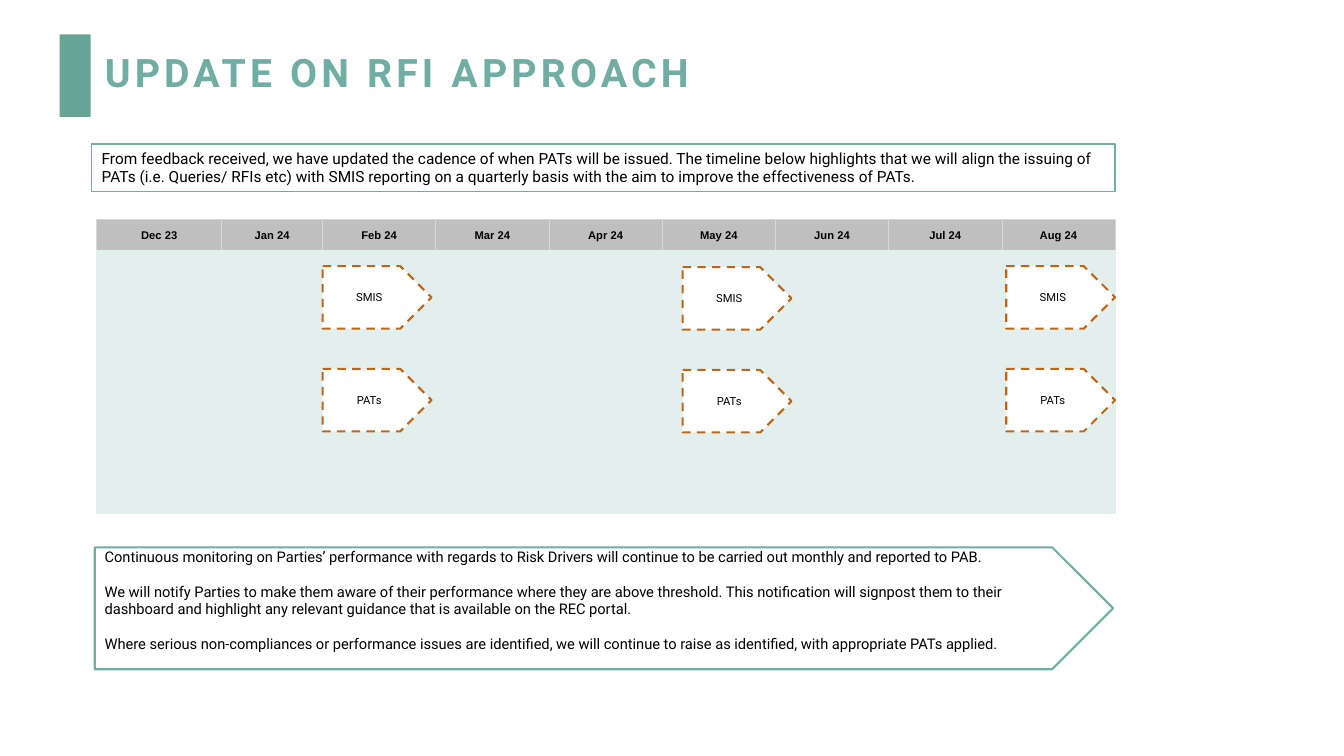
from dataclasses import dataclass

from lxml import etree
from pptx import Presentation
from pptx.dml.color import RGBColor
from pptx.enum.dml import MSO_LINE
from pptx.enum.shapes import MSO_SHAPE
from pptx.enum.text import MSO_ANCHOR, PP_ALIGN
from pptx.oxml.ns import qn
from pptx.shapes.autoshape import Shape
from pptx.slide import Slide
from pptx.table import _Cell
from pptx.text.text import TextFrame
from pptx.util import Inches, Pt

RECTANGLE, PENTAGON = MSO_SHAPE.RECTANGLE, MSO_SHAPE.PENTAGON
TOP, MIDDLE = MSO_ANCHOR.TOP, MSO_ANCHOR.MIDDLE
LEFT, CENTER = PP_ALIGN.LEFT, PP_ALIGN.CENTER
DASH = MSO_LINE.DASH

TEAL, DARK_TEAL, PALE_TEAL = "70ADA3", "68A495", "E2EFED"
WHITE, BLACK, ORANGE = "FFFFFF", "000000", "BE6516"
GREY, LIGHT_GREY = "BFBFBF", "D9D9D9"

TITLE = "UPDATE ON RFI APPROACH"
INTRODUCTION = (
    "From feedback received, we have updated the cadence of when PATs will be issued. "
    "The timeline below highlights that we will align the issuing of PATs "
    "(i.e. Queries/ RFIs etc) with SMIS reporting on a quarterly basis "
    "with the aim to improve the effectiveness of PATs."
)
MONITORING = [
    "Continuous monitoring on Parties’ performance with regards to Risk Drivers "
    "will continue to be carried out monthly and reported to PAB.",
    "We will notify Parties to make them aware of their performance where they are "
    "above threshold. This notification will signpost them to their dashboard and "
    "highlight any relevant guidance that is available on the REC portal.",
    "Where serious non-compliances or performance issues are identified, we will "
    "continue to raise as identified, with appropriate PATs applied.",
]
MONTHS = ["Dec 23", "Jan 24", "Feb 24", "Mar 24", "Apr 24",
          "May 24", "Jun 24", "Jul 24", "Aug 24"]
TABLE_WIDTH = 10.1
FIRST_WIDTHS = [1.24, 1.0]
ROW_HEIGHTS = [0.31, 0.77, 1.83]


@dataclass
class Box:
    left: float
    top: float
    width: float
    height: float


@dataclass
class Milestone:
    left: float
    top: float


MILESTONES = [Milestone(3.2, 2.64), Milestone(6.77, 2.65), Milestone(9.98, 2.64)]
MILESTONE_LABELS = ["SMIS", "PATs"]
LABEL_PITCH = 1.02


def color(value: str) -> RGBColor:
    return RGBColor.from_string(value)


def write(text_frame: TextFrame, lines: list[str], size: float, align: PP_ALIGN,
          font: str = "Roboto", font_color: str = BLACK, bold: bool = False,
          gap: float = 0) -> None:
    text_frame.text = "\n".join(lines)
    text_frame.word_wrap = True
    for index, paragraph in enumerate(text_frame.paragraphs):
        paragraph.alignment = align
        if index:
            paragraph.space_before = Pt(gap)
        for run in paragraph.runs:
            run.font.name = font
            run.font.size = Pt(size)
            run.font.bold = bold
            run.font.color.rgb = color(font_color)


def place(shape: Shape, box: Box) -> None:
    shape.left, shape.top = Inches(box.left), Inches(box.top)
    shape.width, shape.height = Inches(box.width), Inches(box.height)


def add_panel(slide: Slide, kind: MSO_SHAPE, box: Box, fill: str,
              line: str = "", line_width: float = 1) -> Shape:
    shape = slide.shapes.add_shape(kind, 0, 0, 0, 0)
    place(shape, box)
    shape.shadow.inherit = False
    shape.fill.solid()
    shape.fill.fore_color.rgb = color(fill)
    if line:
        shape.line.color.rgb = color(line)
        shape.line.width = Pt(line_width)
    else:
        shape.line.fill.background()
    return shape


def set_borders(cell: _Cell, colors: dict[str, str], width: float) -> None:
    properties = cell._tc.get_or_add_tcPr()
    for index, (side, value) in enumerate(colors.items()):
        border = etree.Element(qn(f"a:ln{side}"), w=str(Pt(width)))
        fill = etree.SubElement(border, qn("a:solidFill"))
        etree.SubElement(fill, qn("a:srgbClr"), val=value)
        properties.insert(index, border)


def add_title(slide: Slide) -> None:
    title = slide.shapes.title
    place(title, Box(0.94, 0.38, 10.15, 0.72))
    write(title.text_frame, [TITLE], 28, LEFT, font_color=TEAL, bold=True)
    title.text_frame.vertical_anchor = MIDDLE
    paragraph = title.text_frame.paragraphs[0]
    paragraph.line_spacing = 0.9
    paragraph.runs[0].font._element.set("spc", "300")


def add_timeline(slide: Slide) -> None:
    table = slide.shapes.add_table(
        len(ROW_HEIGHTS), len(MONTHS), Inches(0.96), Inches(2.18),
        Inches(TABLE_WIDTH), Inches(sum(ROW_HEIGHTS))).table
    table.first_row = table.horz_banding = False
    month_count = len(MONTHS) - len(FIRST_WIDTHS)
    month_width = (TABLE_WIDTH - sum(FIRST_WIDTHS)) / month_count
    for column, width in zip(table.columns, FIRST_WIDTHS + [month_width] * month_count):
        column.width = Inches(width)
    for row_index, height in enumerate(ROW_HEIGHTS):
        table.rows[row_index].height = Inches(height)
        is_header = row_index == 0
        for cell, month in zip(table.rows[row_index].cells, MONTHS):
            cell.fill.solid()
            cell.fill.fore_color.rgb = color(GREY if is_header else PALE_TEAL)
            edge = LIGHT_GREY if is_header else PALE_TEAL
            borders = {"L": edge, "R": edge, "T": edge, "B": PALE_TEAL}
            set_borders(cell, borders, 0.5 if is_header else 1)
            if is_header:
                cell.margin_left = cell.margin_right = 0
                cell.margin_top = cell.margin_bottom = 0
                cell.vertical_anchor = MIDDLE
                write(cell.text_frame, [month], 8, CENTER, font="Arial", bold=True)


def add_milestones(slide: Slide) -> None:
    for milestone in MILESTONES:
        for index, label in enumerate(MILESTONE_LABELS):
            box = Box(milestone.left, milestone.top + index * LABEL_PITCH, 1.08, 0.62)
            shape = add_panel(slide, PENTAGON, box, WHITE, ORANGE, 1.5)
            shape.line.dash_style = DASH
            shape.text_frame.vertical_anchor = MIDDLE
            write(shape.text_frame, [label], 8, CENTER)


def main() -> None:
    presentation = Presentation()
    presentation.slide_width, presentation.slide_height = Inches(13.33), Inches(7.5)
    slide = presentation.slides.add_slide(presentation.slide_layouts[5])
    add_panel(slide, RECTANGLE, Box(0.59, 0.34, 0.31, 0.82), DARK_TEAL)
    add_title(slide)
    add_timeline(slide)

    monitoring = add_panel(slide, PENTAGON, Box(0.94, 5.43, 10.1, 1.21), WHITE, TEAL, 1.5)
    monitoring.text_frame.vertical_anchor = TOP
    monitoring.text_frame.margin_top = 0
    write(monitoring.text_frame, MONITORING, 10.5, LEFT, gap=12.5)

    introduction = add_panel(slide, RECTANGLE, Box(0.91, 1.43, 10.15, 0.47), WHITE, TEAL)
    introduction.text_frame.vertical_anchor = TOP
    write(introduction.text_frame, [INTRODUCTION], 11, LEFT)

    add_milestones(slide)
    presentation.save("out.pptx")


if __name__ == "__main__":
    main()
